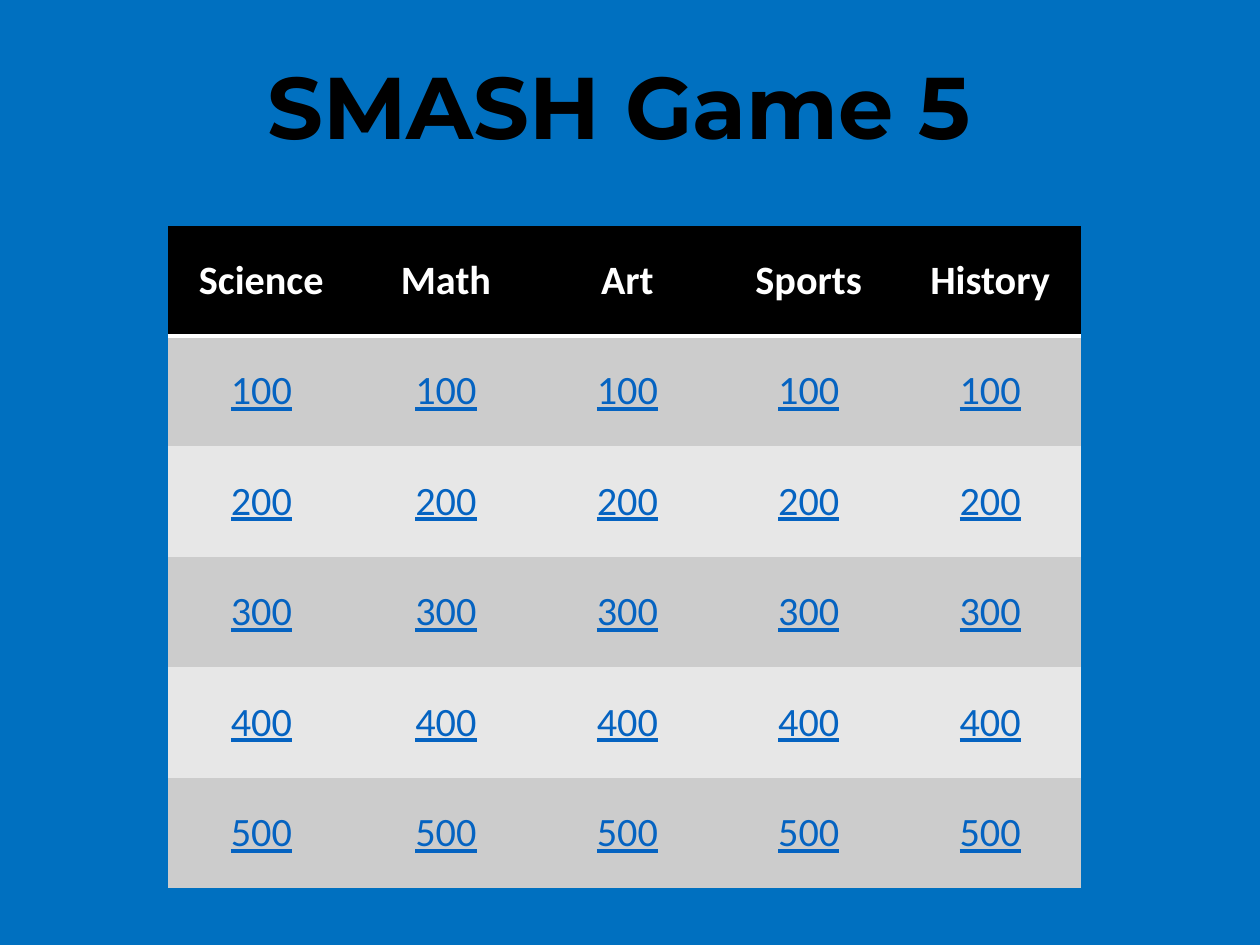
from dataclasses import dataclass

import lxml.etree
import pptx
import pptx.dml.color
import pptx.enum.text
import pptx.oxml.ns
import pptx.util
from pptx.util import Inches


@dataclass(frozen=True)
class Theme:
    background: str = "0070C0"
    dark: str = "000000"
    light: str = "FFFFFF"
    link: str = "0563C1"
    bands: tuple = ("CCCCCC", "E7E7E7")
    title_font: str = "Montserrat"
    body_font: str = "Calibri"
    title_size: int = 50
    body_size: int = 23
    rule_width: int = 2


THEME = Theme()
PLAIN_TABLE_STYLE = "{2D5ABB26-0587-4C30-8999-92F81FD0307C}"
qn = pptx.oxml.ns.qn


def rgb(value):
    return pptx.dml.color.RGBColor.from_string(value)


def write(frame, text, *, font=THEME.body_font, size=THEME.body_size,
          color=THEME.dark, bold=False, underline=False, line_spacing=1.0):
    """Put one centred, formatted line of text in a text frame."""
    para = frame.paragraphs[0]
    para.alignment = pptx.enum.text.PP_ALIGN.CENTER
    para.line_spacing = line_spacing
    span = para.add_run()
    span.text = text
    span.font.name = font
    span.font.size = pptx.util.Pt(size)
    span.font.bold = bold
    span.font.underline = underline
    span.font.color.rgb = rgb(color)


deck = pptx.Presentation()
deck.slide_width, deck.slide_height = Inches(10), Inches(7.5)
page = deck.slides.add_slide(deck.slide_layouts[6])
page.background.fill.solid()
page.background.fill.fore_color.rgb = rgb(THEME.background)

# Title
title = page.shapes.add_textbox(Inches(1.79), Inches(0.58), Inches(6.25), Inches(0.61))
title.text_frame.word_wrap = True
title.text_frame.vertical_anchor = pptx.enum.text.MSO_ANCHOR.MIDDLE
write(title.text_frame, "SMASH Game 5", font=THEME.title_font,
      size=THEME.title_size, bold=True, line_spacing=0.9)

# Question board: one column per category, one row per point value
categories = ["Science", "Math", "Art", "Sports", "History"]
points = range(100, 501, 100)
rows = [categories] + [[str(value)] * len(categories) for value in points]

board = page.shapes.add_table(len(rows), len(categories), Inches(1.33), Inches(1.79),
                              Inches(7.24), Inches(5.26)).table
board.horz_banding = False
board._tbl.tblPr.find(qn("a:tableStyleId")).text = PLAIN_TABLE_STYLE
for index, column in enumerate(board.columns):
    column.width = Inches(1.44 if index else 1.49)

for row_index, labels in enumerate(rows):
    is_header = row_index == 0
    for column_index, label in enumerate(labels):
        cell = board.cell(row_index, column_index)
        cell.vertical_anchor = pptx.enum.text.MSO_ANCHOR.MIDDLE
        cell.margin_left = cell.margin_right = Inches(0.08)
        cell.margin_top = cell.margin_bottom = Inches(0.04)
        cell.fill.solid()
        cell.fill.fore_color.rgb = rgb(
            THEME.dark if is_header else THEME.bands[(row_index - 1) % 2])
        write(cell.text_frame, label, bold=is_header, underline=not is_header,
              color=THEME.light if is_header else THEME.link)
        if is_header:
            rule = lxml.etree.Element(qn("a:lnB"), w=str(pptx.util.Pt(THEME.rule_width)))
            fill = lxml.etree.SubElement(rule, qn("a:solidFill"))
            lxml.etree.SubElement(fill, qn("a:srgbClr"), val=THEME.light)
            cell._tc.get_or_add_tcPr().insert(0, rule)

deck.save("out.pptx")
